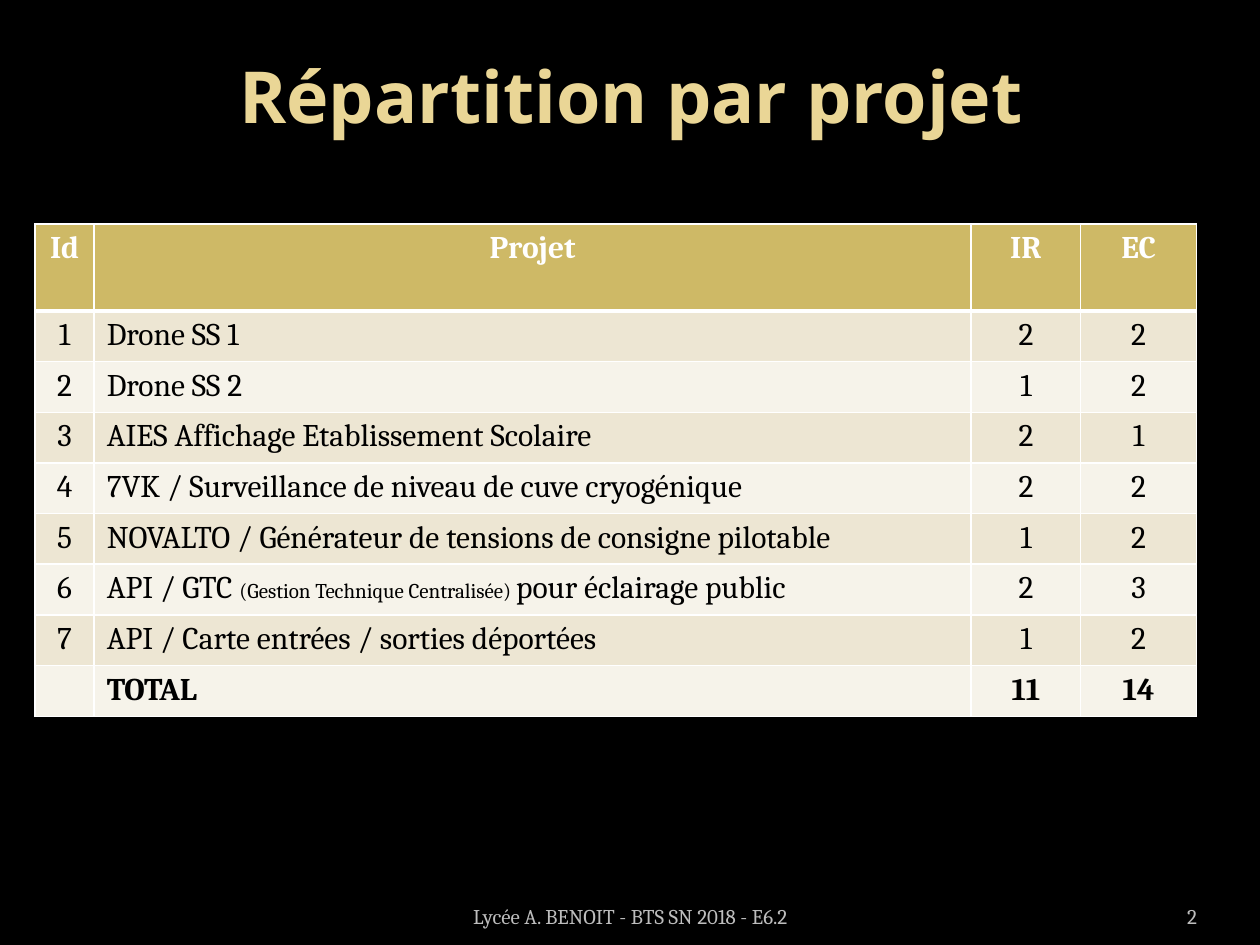
from dataclasses import dataclass

from lxml.etree import SubElement
from pptx import Presentation
from pptx.dml.color import RGBColor
from pptx.enum.text import MSO_ANCHOR, PP_ALIGN
from pptx.oxml.ns import qn
from pptx.util import Pt

COLORS = {
    "background": "000000",
    "title": "EAD696",
    "header": "CEB966",
    "band_dark": "EDE6D3",
    "band_light": "F6F3EA",
    "white": "FFFFFF",
    "text": "000000",
    "footer": "BDBDBD",
}
COLUMN_WIDTHS = (33.84, 501.12, 62.64, 66.24)
HEADER_HEIGHT = 49.7
ROW_HEIGHT = 28.95


@dataclass(frozen=True)
class Project:
    number: str
    name: str
    ir: int
    ec: int
    detail: str = ""
    ending: str = ""


@dataclass(frozen=True)
class Footer:
    text: str
    left: float
    width: float
    align: PP_ALIGN
    side_margin: float


PROJECTS = (
    Project("1", "Drone SS 1", 2, 2),
    Project("2", "Drone SS 2", 1, 2),
    Project("3", "AIES Affichage Etablissement Scolaire", 2, 1),
    Project("4", "7VK / Surveillance de niveau de cuve cryogénique", 2, 2),
    Project("5", "NOVALTO / Générateur de tensions de consigne pilotable", 1, 2),
    Project("6", "API / GTC ", 2, 3, "(Gestion Technique Centralisée) ", "pour éclairage public"),
    Project("7", "API / Carte entrées / sorties déportées", 1, 2),
)
FOOTERS = (
    Footer("2", 624.2, 59.8, PP_ALIGN.RIGHT, 0),
    Footer("Lycée A. BENOIT - BTS SN 2018 - E6.2", 246.2, 228.2, PP_ALIGN.CENTER, 7.2),
)


def color(name: str) -> RGBColor:
    return RGBColor.from_string(COLORS[name])


def add_text(frame, text: str, *, size: float = 18, font: str = "Cambria",
             fill: str = "text", bold: bool = False, align=PP_ALIGN.LEFT) -> None:
    para = frame.paragraphs[0]
    para.alignment = align
    span = para.add_run()
    span.text = text
    span.font.size = Pt(size)
    span.font.name = font
    span.font.bold = bold
    span.font.color.rgb = color(fill)


def style_cell(cell, fill: str, top: float = 1, bottom: float = 1) -> None:
    properties = cell._tc.get_or_add_tcPr()
    for side, width in (("L", 1), ("R", 1), ("T", top), ("B", bottom)):
        line = SubElement(properties, qn(f"a:ln{side}"), w=str(Pt(width)))
        solid = SubElement(line, qn("a:solidFill"))
        SubElement(solid, qn("a:srgbClr"), val=COLORS["white"])
    cell.fill.solid()
    cell.fill.fore_color.rgb = color(fill)


def add_project_table(page) -> None:
    total = ("", "TOTAL", sum(p.ir for p in PROJECTS), sum(p.ec for p in PROJECTS))
    rows = [("Id", "Projet", "IR", "EC")]
    rows += [(p.number, p.name, p.ir, p.ec) for p in PROJECTS] + [total]
    height = HEADER_HEIGHT + ROW_HEIGHT * (len(rows) - 1)
    table = page.shapes.add_table(len(rows), len(COLUMN_WIDTHS), Pt(20), Pt(128),
                                  Pt(sum(COLUMN_WIDTHS)), Pt(height)).table
    table.horz_banding = False
    for column, width in zip(table.columns, COLUMN_WIDTHS):
        column.width = Pt(width)

    for r, values in enumerate(rows):
        header = r == 0
        table.rows[r].height = Pt(HEADER_HEIGHT if header else ROW_HEIGHT)
        fill = "header" if header else "band_dark" if r % 2 else "band_light"
        for c, value in enumerate(values):
            cell = table.cell(r, c)
            style_cell(cell, fill, top=3 if r == 1 else 1, bottom=3 if header else 1)
            if value != "":
                add_text(cell.text_frame, str(value),
                         fill="white" if header else "text",
                         bold=header or r == len(rows) - 1,
                         align=PP_ALIGN.LEFT if c == 1 and not header else PP_ALIGN.CENTER)

    for r, project in enumerate(PROJECTS, start=1):
        if project.detail:
            frame = table.cell(r, 1).text_frame
            add_text(frame, project.detail, size=12)
            add_text(frame, project.ending)


def add_footer(page, footer: Footer) -> None:
    box = page.shapes.add_textbox(Pt(footer.left), Pt(505.4), Pt(footer.width), Pt(28.8))
    frame = box.text_frame
    frame.word_wrap = True
    frame.vertical_anchor = MSO_ANCHOR.BOTTOM
    frame.margin_left = frame.margin_right = Pt(footer.side_margin)
    add_text(frame, footer.text, size=12, fill="footer", align=footer.align)


def add_title(page, text: str) -> None:
    title = page.shapes.title
    title.left, title.top, title.width, title.height = Pt(36.7), Pt(9.4), Pt(648), Pt(90)
    title.text_frame.vertical_anchor = MSO_ANCHOR.MIDDLE
    add_text(title.text_frame, text, size=41, font="Noto Sans", fill="title",
             bold=True, align=PP_ALIGN.CENTER)


def main() -> None:
    deck = Presentation()
    deck.slide_width, deck.slide_height = Pt(720), Pt(540)
    page = deck.slides.add_slide(deck.slide_layouts[5])
    page.background.fill.solid()
    page.background.fill.fore_color.rgb = color("background")
    add_title(page, "Répartition par projet")
    add_project_table(page)
    for footer in FOOTERS:
        add_footer(page, footer)
    deck.save("out.pptx")


if __name__ == "__main__":
    main()
